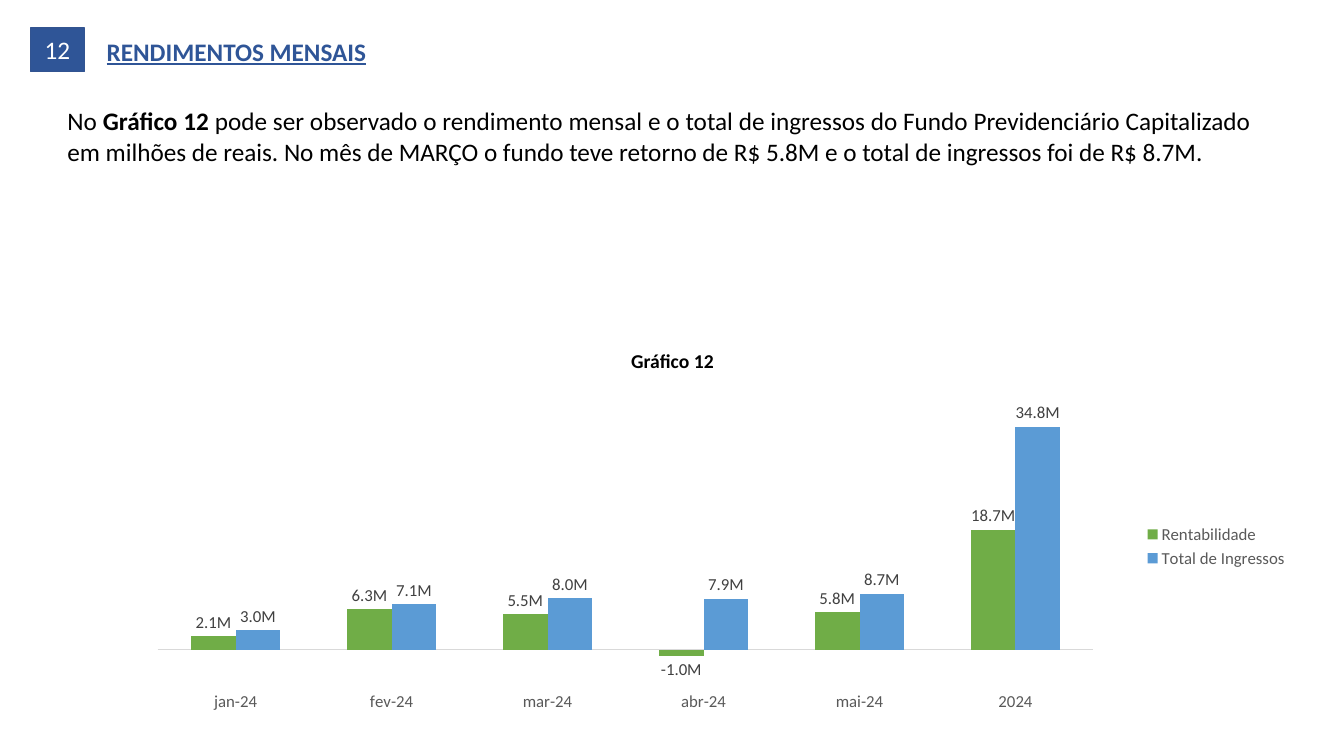
"""Build the monthly income slide with its clustered column chart."""
from dataclasses import dataclass

from lxml import etree
from pptx import Presentation
from pptx.chart.data import CategoryChartData
from pptx.dml.color import RGBColor
from pptx.enum.chart import (XL_CHART_TYPE, XL_LABEL_POSITION,
                             XL_LEGEND_POSITION, XL_TICK_LABEL_POSITION,
                             XL_TICK_MARK)
from pptx.enum.shapes import MSO_SHAPE
from pptx.enum.text import MSO_ANCHOR, PP_ALIGN
from pptx.oxml.ns import qn
from pptx.util import Inches, Pt

COLUMNS = XL_CHART_TYPE.COLUMN_CLUSTERED
OUTSIDE = XL_LABEL_POSITION.OUTSIDE_END
RIGHT = XL_LEGEND_POSITION.RIGHT
LOW = XL_TICK_LABEL_POSITION.LOW
NO_TICK = XL_TICK_MARK.NONE
RECT = MSO_SHAPE.RECTANGLE
TOP, MIDDLE = MSO_ANCHOR.TOP, MSO_ANCHOR.MIDDLE
LEFT, CENTER, JUSTIFY = PP_ALIGN.LEFT, PP_ALIGN.CENTER, PP_ALIGN.JUSTIFY


@dataclass(frozen=True)
class Theme:
    font: str = "Calibri"
    navy: str = "2F5597"
    border: str = "325491"
    white: str = "FFFFFF"
    black: str = "000000"
    green: str = "70AD47"
    blue: str = "5B9BD5"
    axis_text: str = "595959"
    label_text: str = "404040"
    axis_line: str = "D9D9D9"
    body: int = 18
    caption: int = 14
    chart: int = 12


theme = Theme()


def style_font(font, size, color, bold=False, underline=None):
    font.name = theme.font
    font.size = Pt(size)
    font.color.rgb = RGBColor.from_string(color)
    font.bold = bold
    font.underline = underline


def write_text(sp, runs, size, color, align=LEFT, anchor=TOP, underline=None):
    tf = sp.text_frame
    tf.word_wrap = True
    tf.vertical_anchor = anchor
    p = tf.paragraphs[0]
    p.alignment = align
    for text, bold in runs:
        r = p.add_run()
        r.text = text
        style_font(r.font, size, color, bold, underline)


prs = Presentation()
prs.slide_width = Inches(13.33)
prs.slide_height = Inches(7.5)
s = prs.slides.add_slide(prs.slide_layouts[6])

badge = s.shapes.add_shape(RECT, Inches(0.3), Inches(0.28), Inches(0.54), Inches(0.43))
badge.shadow.inherit = False
badge.fill.solid()
badge.fill.fore_color.rgb = RGBColor.from_string(theme.navy)
badge.line.color.rgb = RGBColor.from_string(theme.border)
badge.line.width = Pt(1)
write_text(badge, [("12", False)], theme.body, theme.white, CENTER, MIDDLE)

title = s.shapes.add_textbox(Inches(0.96), Inches(0.31), Inches(4.42), Inches(0.4))
write_text(title, [("RENDIMENTOS MENSAIS", True)], theme.body, theme.navy, underline=True)

caption = s.shapes.add_textbox(Inches(5.63), Inches(3.41), Inches(2.08), Inches(0.34))
write_text(caption, [("Gráfico 12", True)], theme.caption, theme.black, CENTER)

data = CategoryChartData(number_format='0.0,,"M"')
data.categories = ["jan-24", "fev-24", "mar-24", "abr-24", "mai-24", "2024"]
income = [
    ("Rentabilidade", theme.green, [2.1, 6.3, 5.5, -1.0, 5.8, 18.7]),
    ("Total de Ingressos", theme.blue, [3.0, 7.1, 8.0, 7.9, 8.7, 34.8]),
]
for name, color, millions in income:
    data.add_series(name, [round(m * 1_000_000) for m in millions])

chart = s.shapes.add_chart(COLUMNS, Inches(1.19), Inches(3.75),
                           Inches(11.69), Inches(3.34), data).chart
style_font(chart.font, theme.chart, theme.black)
chart.has_title = False
chart.has_legend = True
chart.legend.position = RIGHT
chart.legend.include_in_layout = False
style_font(chart.legend.font, theme.chart, theme.axis_text)

months = chart.category_axis
months.tick_label_position = LOW
months.major_tick_mark = NO_TICK
months.minor_tick_mark = NO_TICK
months.has_major_gridlines = False
months.format.line.color.rgb = RGBColor.from_string(theme.axis_line)
months.format.line.width = Pt(0.75)
style_font(months.tick_labels.font, theme.chart, theme.axis_text)

values = chart.value_axis
values.visible = False
values.has_major_gridlines = False
values.minimum_scale = -5_000_000
values.maximum_scale = 40_000_000

plot = chart.plots[0]
plot.gap_width = 150
plot.overlap = 0
plot.vary_by_categories = False
for series, (name, color, millions) in zip(plot.series, income):
    series.invert_if_negative = False
    series.format.fill.solid()
    series.format.fill.fore_color.rgb = RGBColor.from_string(color)
    labels = series.data_labels
    labels.show_value = True
    labels.number_format = '0.0,,"M"'
    labels.number_format_is_linked = False
    labels.position = OUTSIDE
    style_font(labels.font, theme.chart, theme.label_text)

area = chart.element.find(".//" + qn("c:plotArea"))
for old in area.findall(qn("c:layout")):
    area.remove(old)
layout = etree.Element(qn("c:layout"))
area.insert(0, layout)
manual = etree.SubElement(layout, qn("c:manualLayout"))
for tag, val in [("layoutTarget", "inner"), ("xMode", "edge"), ("yMode", "edge"),
                 ("x", "0.032"), ("y", "0.047"), ("w", "0.794"), ("h", "0.855")]:
    etree.SubElement(manual, qn("c:" + tag)).set("val", val)

summary = s.shapes.add_textbox(Inches(0.57), Inches(1), Inches(11.94), Inches(0.71))
write_text(summary, [
    ("No ", False),
    ("Gráfico 12 ", True),
    ("pode ser observado o rendimento mensal e o total de ingressos do Fundo "
     "Previdenciário Capitalizado em milhões de reais. No mês de MARÇO o fundo teve "
     "retorno de R$ 5.8M e o total de ingressos foi de R$ 8.7M.", False),
], theme.body, theme.black, JUSTIFY)

prs.save("out.pptx")
